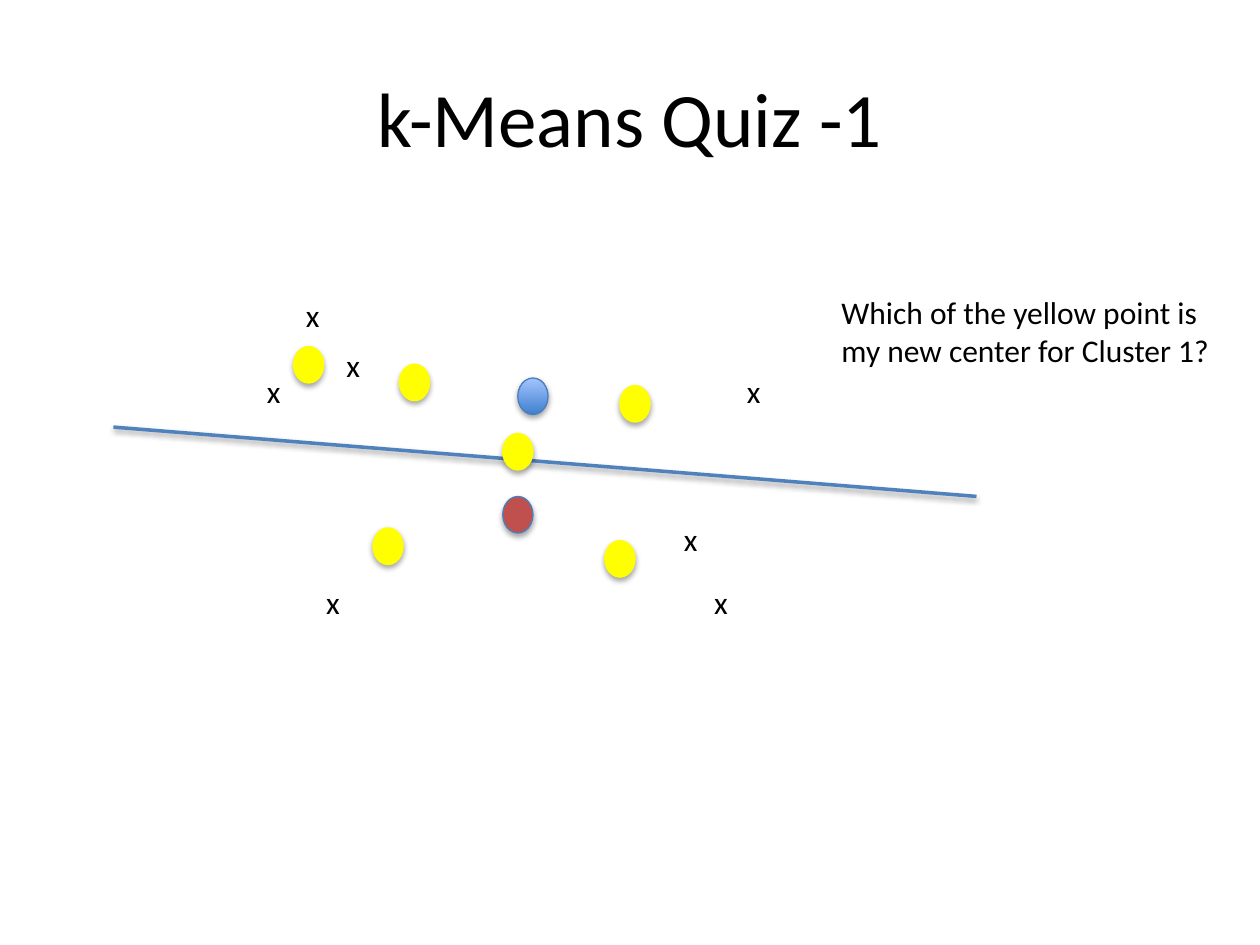
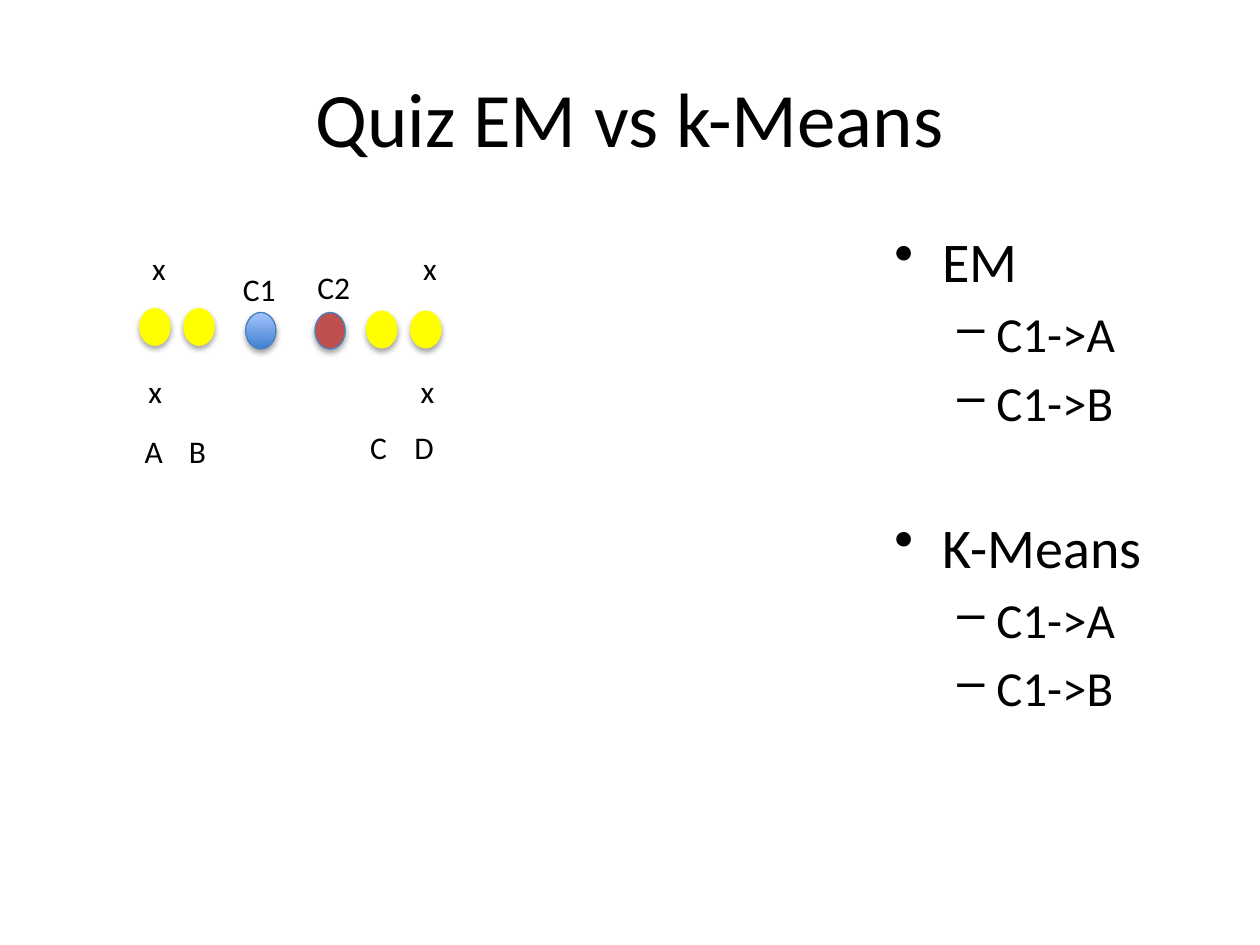
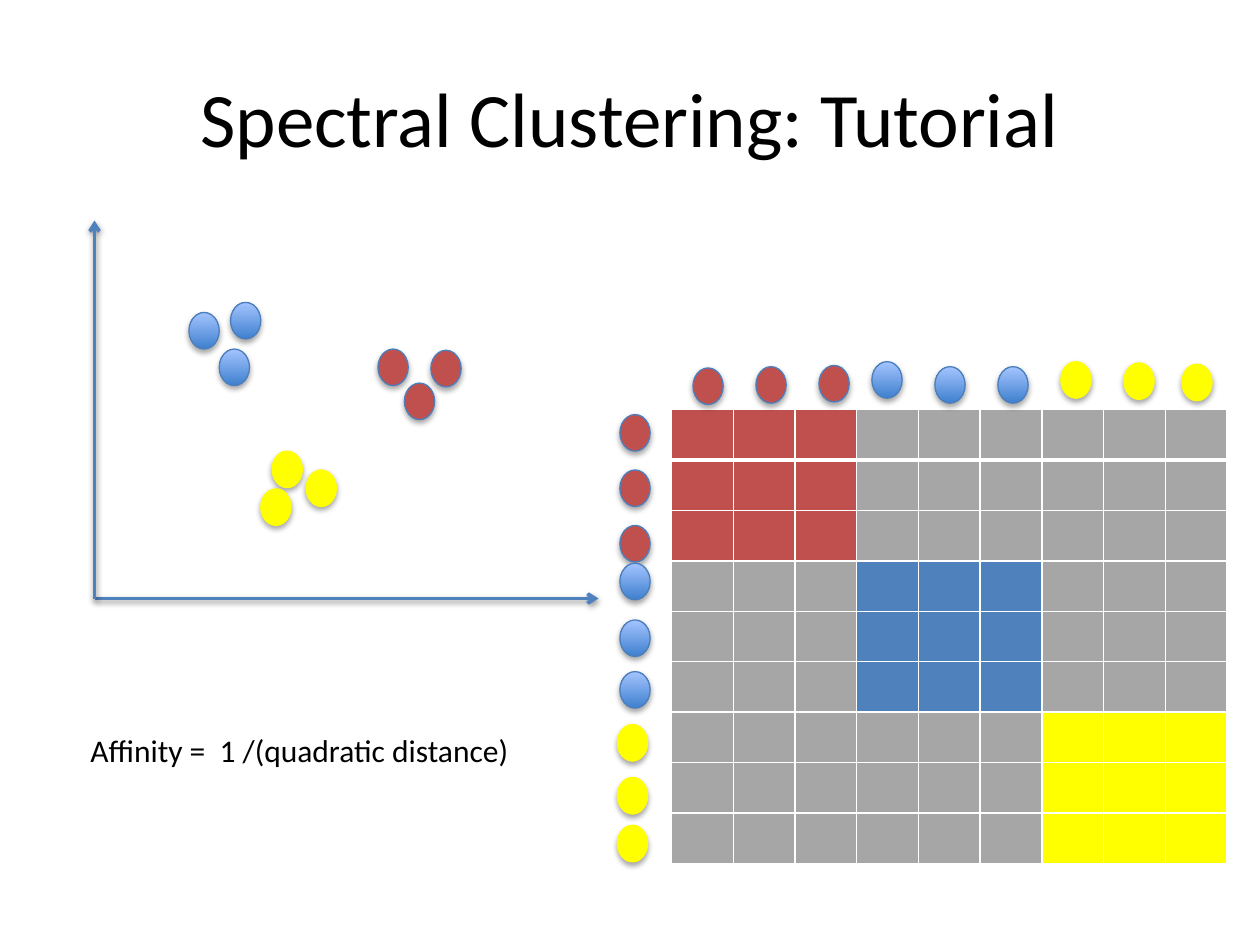
from typing import NamedTuple

from lxml import etree
from pptx import Presentation
from pptx.dml.color import RGBColor
from pptx.enum.shapes import MSO_CONNECTOR, MSO_SHAPE
from pptx.enum.text import MSO_ANCHOR, MSO_AUTO_SIZE, PP_ALIGN
from pptx.oxml.ns import qn
from pptx.util import Emu, Pt

OVAL = MSO_SHAPE.OVAL
STRAIGHT = MSO_CONNECTOR.STRAIGHT
MIDDLE = MSO_ANCHOR.MIDDLE
CENTER = PP_ALIGN.CENTER
GROW = MSO_AUTO_SIZE.SHAPE_TO_FIT_TEXT

SCALE = 9144  # EMU in one px, 100 px to the inch
FONT = "Calibri"
BLACK, WHITE, GREY = "000000", "FFFFFF", "A6A6A6"
RED, BLUE, YELLOW = "C0504D", "4F81BD", "FFFF00"
EDGE = "4B7EBC"
DOT_W, DOT_H = 24, 29


class Paint(NamedTuple):
    """Dot colours; a top colour makes the fill a vertical gradient."""
    fill: str
    line: str
    top: str = ""


class Label(NamedTuple):
    text: str
    x: int
    y: int
    w: int = 31
    h: int = 40


class Item(NamedTuple):
    text: str
    level: int = 0
    gap: float = 0


class Level(NamedTuple):
    mark: str
    size: int
    left: int
    hang: int


SKY = Paint("3F80CE", EDGE, "A4C4FF")
BRICK = Paint(RED, EDGE)
SUN = Paint(YELLOW, YELLOW)
LEVELS = [Level("•", 32, 38, 38), Level("–", 28, 81, 31)]


def px(value: int) -> Emu:
    return Emu(value * SCALE)


def rgb(code: str) -> RGBColor:
    return RGBColor.from_string(code)


def add_tag(parent, tag: str, **attrs):
    return etree.SubElement(parent, qn(tag), {k: str(v) for k, v in attrs.items()})


def drop_shade(shape, dist: int, alpha: int) -> None:
    """Cast a soft shadow straight down; call it after the line is set."""
    props = shape._element.spPr
    effect = props.find(qn("a:effectLst"))
    if effect is None:
        effect = add_tag(props, "a:effectLst")
    shade = add_tag(effect, "a:outerShdw", blurRad=40000, dist=dist,
                    dir=5400000, rotWithShape=0)
    color = add_tag(shade, "a:srgbClr", val=BLACK)
    add_tag(color, "a:alpha", val=alpha * 1000)


def add_box(slide, x: int, y: int, w: int, h: int, wrap: bool = True):
    frame = slide.shapes.add_textbox(px(x), px(y), px(w), px(h)).text_frame
    frame.word_wrap = wrap
    return frame


def set_text(para, text: str, size: int) -> None:
    para.text = text
    para.font.name = FONT
    para.font.size = Pt(size)
    para.font.color.rgb = rgb(BLACK)


def add_slide(deck, title: str):
    slide = deck.slides.add_slide(deck.slide_layouts[6])
    frame = add_box(slide, 50, 30, 900, 125)
    frame.vertical_anchor = MIDDLE
    set_text(frame.paragraphs[0], title, 44)
    frame.paragraphs[0].alignment = CENTER
    return slide


def add_label(slide, label: Label, wrap: bool = False) -> None:
    frame = add_box(slide, label.x, label.y, label.w, label.h, wrap)
    frame.auto_size = GROW
    set_text(frame.paragraphs[0], label.text, 18)


def add_dots(slide, paint: Paint, *spots: tuple[int, int]) -> None:
    for x, y in spots:
        dot = slide.shapes.add_shape(OVAL, px(x), px(y), px(DOT_W), px(DOT_H))
        if paint.top:
            dot.fill.gradient()
            dot.fill.gradient_angle = 90
            for stop, code in zip(dot.fill.gradient_stops, (paint.fill, paint.top)):
                stop.color.rgb = rgb(code)
        else:
            dot.fill.solid()
            dot.fill.fore_color.rgb = rgb(paint.fill)
        dot.line.color.rgb = rgb(paint.line)
        dot.line.width = Pt(0.75)
        dot.shadow.inherit = False
        drop_shade(dot, 23000, 35)


def add_line(slide, x1: int, y1: int, x2: int, y2: int, arrow: bool = False) -> None:
    line = slide.shapes.add_connector(STRAIGHT, px(x1), px(y1), px(x2), px(y2))
    line.line.color.rgb = rgb(BLUE)
    line.line.width = Pt(2)
    if arrow:
        add_tag(line.line._get_or_add_ln(), "a:tailEnd", type="arrow")
    drop_shade(line, 20000, 38)


def add_list(slide, x: int, y: int, w: int, h: int, items: list[Item]) -> None:
    frame = add_box(slide, x, y, w, h)
    for i, item in enumerate(items):
        level = LEVELS[item.level]
        para = frame.add_paragraph() if i else frame.paragraphs[0]
        set_text(para, item.text, level.size)
        para.level = item.level
        para.space_before = Pt(level.size * 0.2 + item.gap)
        props = para._p.get_or_add_pPr()
        props.set("marL", str(px(level.left)))
        props.set("indent", str(-px(level.hang)))
        mark = etree.Element(qn("a:buChar"), char=level.mark)
        rest = props.find(qn("a:defRPr"))
        if rest is None:
            props.append(mark)
        else:
            rest.addprevious(mark)


def add_edges(cell, row: int) -> None:
    """White cell borders, thick below the first row."""
    widths = {"L": 1, "R": 1, "T": 3 if row == 1 else 1, "B": 3 if row == 0 else 1}
    for side, width in widths.items():
        edge = add_tag(cell._tc.get_or_add_tcPr(), f"a:ln{side}", w=Pt(width))
        add_tag(add_tag(edge, "a:solidFill"), "a:srgbClr", val=WHITE)


def add_matrix(slide, x: int, y: int, blocks: list[str], span: int) -> None:
    """Square grid with one coloured block per cluster on its diagonal."""
    count = len(blocks) * span
    table = slide.shapes.add_table(count, count, px(x), px(y),
                                   px(49 * count), px(40 * count)).table
    table.first_row = table.horz_banding = False
    for col in table.columns:
        col.width = px(49)
    for r in range(count):
        for c in range(count):
            cell = table.cell(r, c)
            add_edges(cell, r)
            same = r // span == c // span
            cell.fill.solid()
            cell.fill.fore_color.rgb = rgb(blocks[r // span] if same else GREY)


def draw_quiz(deck) -> None:
    slide = add_slide(deck, "k-Means Quiz -1")
    for x, y in [(233, 230), (202, 290), (265, 270), (583, 290),
                 (249, 458), (533, 408), (557, 458)]:
        add_label(slide, Label("x", x, y))
    add_dots(slide, SKY, (411, 300))
    add_dots(slide, BRICK, (399, 394))
    ask = "Which of the yellow point is my new center for Cluster 1?"
    add_label(slide, Label(ask, 658, 228, 325, 71), wrap=True)
    add_line(slide, 90, 339, 775, 394)
    add_dots(slide, SUN, (317, 289), (233, 275), (492, 306),
             (399, 344), (296, 419), (480, 429))


def draw_versus(deck) -> None:
    slide = add_slide(deck, "Quiz EM vs k-Means")
    moves = [Item("C1->A", 1), Item("C1->B", 1)]
    add_list(slide, 700, 175, 250, 495,
             [Item("EM"), *moves, Item("K-Means", gap=39.8), *moves])
    for x, y in [(111, 193), (108, 290), (326, 193), (324, 290)]:
        add_label(slide, Label("x", x, y, 41, 69))
    for label in [Label("C1", 183, 209, 46), Label("C2", 242, 208, 46),
                  Label("A", 105, 338, 35), Label("B", 140, 338, 34),
                  Label("C", 284, 335, 34), Label("D", 319, 335, 36)]:
        add_label(slide, label)
    add_dots(slide, SKY, (195, 248))
    add_dots(slide, BRICK, (250, 248))
    add_dots(slide, SUN, (111, 245), (146, 245), (291, 247), (326, 247))


def draw_spectral(deck) -> None:
    slide = add_slide(deck, "Spectral Clustering: Tutorial")
    add_line(slide, 75, 475, 475, 475, arrow=True)
    add_line(slide, 75, 475, 75, 175, arrow=True)
    add_dots(slide, SKY, (150, 248), (183, 240), (174, 277))
    add_dots(slide, BRICK, (342, 278), (300, 277), (321, 304))
    add_dots(slide, SUN, (216, 358), (243, 373), (207, 388))

    add_matrix(slide, 533, 325, [RED, BLUE, YELLOW], 3)
    add_dots(slide, BRICK, *[(492, y) for y in (329, 373, 417)])
    add_dots(slide, SKY, *[(492, y) for y in (447, 492, 533)])
    add_dots(slide, SUN, *[(490, y) for y in (575, 617, 655)])
    add_dots(slide, BRICK, (550, 292), (600, 291), (650, 290))
    add_dots(slide, SKY, (692, 287), (742, 291), (792, 291))
    add_dots(slide, SUN, (842, 287), (892, 288), (938, 289))
    add_label(slide, Label("Affinity =  1 /(quadratic distance)", 62, 575, 357))


def main() -> None:
    deck = Presentation()
    deck.slide_width, deck.slide_height = px(1000), px(750)
    draw_quiz(deck)
    draw_versus(deck)
    draw_spectral(deck)
    deck.save("out.pptx")


if __name__ == "__main__":
    main()
